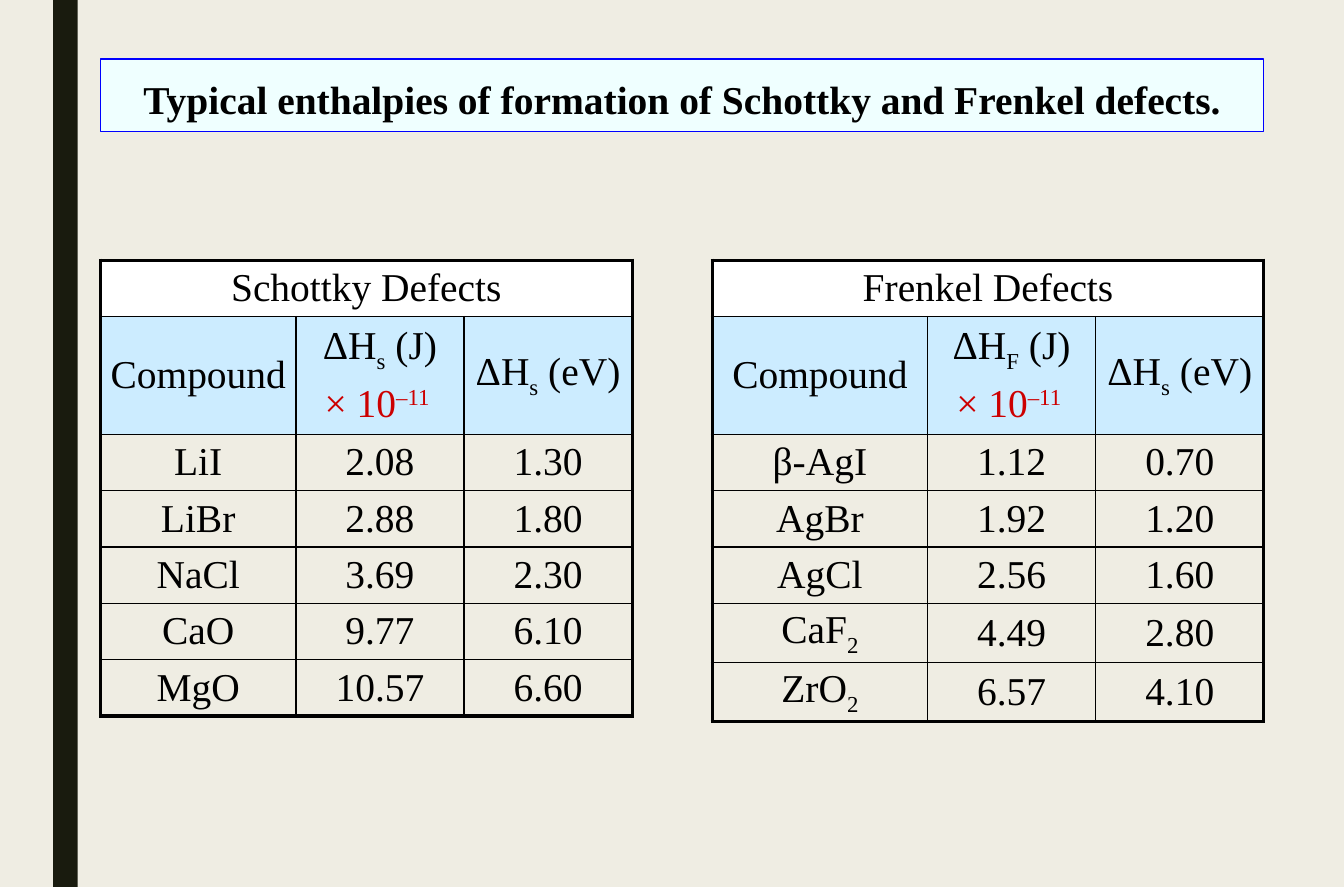
from dataclasses import dataclass

from lxml import etree
from pptx import Presentation
from pptx.dml.color import RGBColor as RGB
from pptx.enum.shapes import MSO_SHAPE as SHAPE
from pptx.enum.text import MSO_ANCHOR as ANCHOR, PP_ALIGN as ALIGN
from pptx.oxml.ns import qn
from pptx.util import Cm, Pt


@dataclass(frozen=True)
class Theme:
    font: str = "Times New Roman"
    size: int = 24
    background: str = "EFEDE3"
    rail: str = "191B0E"
    ink: str = "000000"
    accent: str = "CC0000"
    title_fill: str = "EFFFFF"
    title_line: str = "0000FF"
    caption_fill: str = "FFFFFF"
    header_fill: str = "CCECFF"
    thin: float = 1
    thick: float = 2.25


THEME = Theme()
SUB, SUPER = -25000, 30000
TABLE_TOP = 5.59
CELL_MARGIN = 0.1
ROW_HEIGHT, HEADER_HEIGHT = 1.21, 2.53
VALUE_WIDTH = 3.61

SCHOTTKY = [
    ("LiI", "2.08", "1.30"),
    ("LiBr", "2.88", "1.80"),
    ("NaCl", "3.69", "2.30"),
    ("CaO", "9.77", "6.10"),
    ("MgO", "10.57", "6.60"),
]
FRENKEL = [
    ("β-AgI", "1.12", "0.70"),
    ("AgBr", "1.92", "1.20"),
    ("AgCl", "2.56", "1.60"),
    ([("CaF", 0), ("2", SUB)], "4.49", "2.80"),
    ([("ZrO", 0), ("2", SUB)], "6.57", "4.10"),
]
POWER = [("× 10", 0), ("–11 ", SUPER)]


def enthalpy(index, unit):
    return [("ΔH", 0), (index, SUB), (f" ({unit})", 0)]


def write(p, content, color=THEME.ink, bold=False):
    p.alignment = ALIGN.CENTER
    p.font.name = THEME.font
    p.font.size = Pt(THEME.size)
    p.font.bold = bold
    p.font.color.rgb = RGB.from_string(color)
    runs = [(content, 0)] if isinstance(content, str) else content
    for text, baseline in runs:
        r = p.add_run()
        r.text = text
        if baseline:
            r._r.get_or_add_rPr().set("baseline", str(baseline))


def add_box(s, left, top, width, height, fill, line=None):
    sp = s.shapes.add_shape(SHAPE.RECTANGLE, Cm(left), Cm(top), Cm(width), Cm(height))
    sp.shadow.inherit = False
    sp.fill.solid()
    sp.fill.fore_color.rgb = RGB.from_string(fill)
    if line:
        sp.line.color.rgb = RGB.from_string(line)
        sp.line.width = Pt(0.75)
    else:
        sp.line.fill.background()
    return sp


def add_title(s, text):
    sp = add_box(s, 2.16, 1.27, 24.97, 1.55, THEME.title_fill, THEME.title_line)
    tf = sp.text_frame
    tf.word_wrap = True
    tf.vertical_anchor = ANCHOR.TOP
    tf.margin_left = tf.margin_right = tf.margin_top = tf.margin_bottom = Cm(0.25)
    p = tf.paragraphs[0]
    p.line_spacing = 1.1
    write(p, text, bold=True)


def set_borders(cell, thick_sides):
    tc_pr = cell._tc.get_or_add_tcPr()
    for side in "LRTB":
        width = THEME.thick if side in thick_sides else THEME.thin
        ln = etree.SubElement(tc_pr, qn(f"a:ln{side}"), w=str(Pt(width)))
        fill = etree.SubElement(ln, qn("a:solidFill"))
        etree.SubElement(fill, qn("a:srgbClr"), val=THEME.ink)


def style_cell(cell, fill, thick_sides):
    cell.vertical_anchor = ANCHOR.MIDDLE
    cell.margin_left = cell.margin_right = Cm(CELL_MARGIN)
    cell.margin_top = cell.margin_bottom = Cm(CELL_MARGIN)
    set_borders(cell, thick_sides)
    if fill:
        cell.fill.solid()
        cell.fill.fore_color.rgb = RGB.from_string(fill)
    else:
        cell.fill.background()


def add_defect_table(s, left, compound_width, caption, index, data):
    header = ("Compound", enthalpy(index, "J"), enthalpy("s", "eV"))
    rows = [(caption, "", ""), header, *data]
    widths = [compound_width, VALUE_WIDTH, VALUE_WIDTH]
    heights = [ROW_HEIGHT, HEADER_HEIGHT] + [ROW_HEIGHT] * len(data)
    fills = [THEME.caption_fill, THEME.header_fill] + [None] * len(data)
    table = s.shapes.add_table(
        len(rows), len(widths), Cm(left), Cm(TABLE_TOP), Cm(sum(widths)), Cm(sum(heights))
    ).table
    table.first_row = table.horz_banding = False
    for column, width in zip(table.columns, widths):
        column.width = Cm(width)
    last_row, last_column = len(rows) - 1, len(widths) - 1
    for i, row in enumerate(rows):
        table.rows[i].height = Cm(heights[i])
        for j, content in enumerate(row):
            cell = table.cell(i, j)
            edges = {"L": j == 0, "R": j == last_column or i == 0,
                     "T": i == 0, "B": i == last_row}
            style_cell(cell, fills[i], [side for side, outer in edges.items() if outer])
            if content:
                write(cell.text_frame.paragraphs[0], content)
    table.cell(0, 0).merge(table.cell(0, last_column))
    p = table.cell(1, 1).text_frame.add_paragraph()
    p.space_before = Pt(0.2 * THEME.size)
    write(p, POWER, THEME.accent)


def main():
    prs = Presentation()
    prs.slide_width, prs.slide_height = Cm(28.85), Cm(19.05)
    s = prs.slides.add_slide(prs.slide_layouts[6])
    s.background.fill.solid()
    s.background.fill.fore_color.rgb = RGB.from_string(THEME.background)
    add_box(s, 1.14, 0, 0.53, 19.05, THEME.rail)
    add_title(s, "Typical enthalpies of formation of Schottky and Frenkel defects.")
    add_defect_table(s, 2.16, 4.19, "Schottky Defects", "s", SCHOTTKY)
    add_defect_table(s, 15.29, 4.62, "Frenkel Defects", "F", FRENKEL)
    prs.save("out.pptx")


if __name__ == "__main__":
    main()
